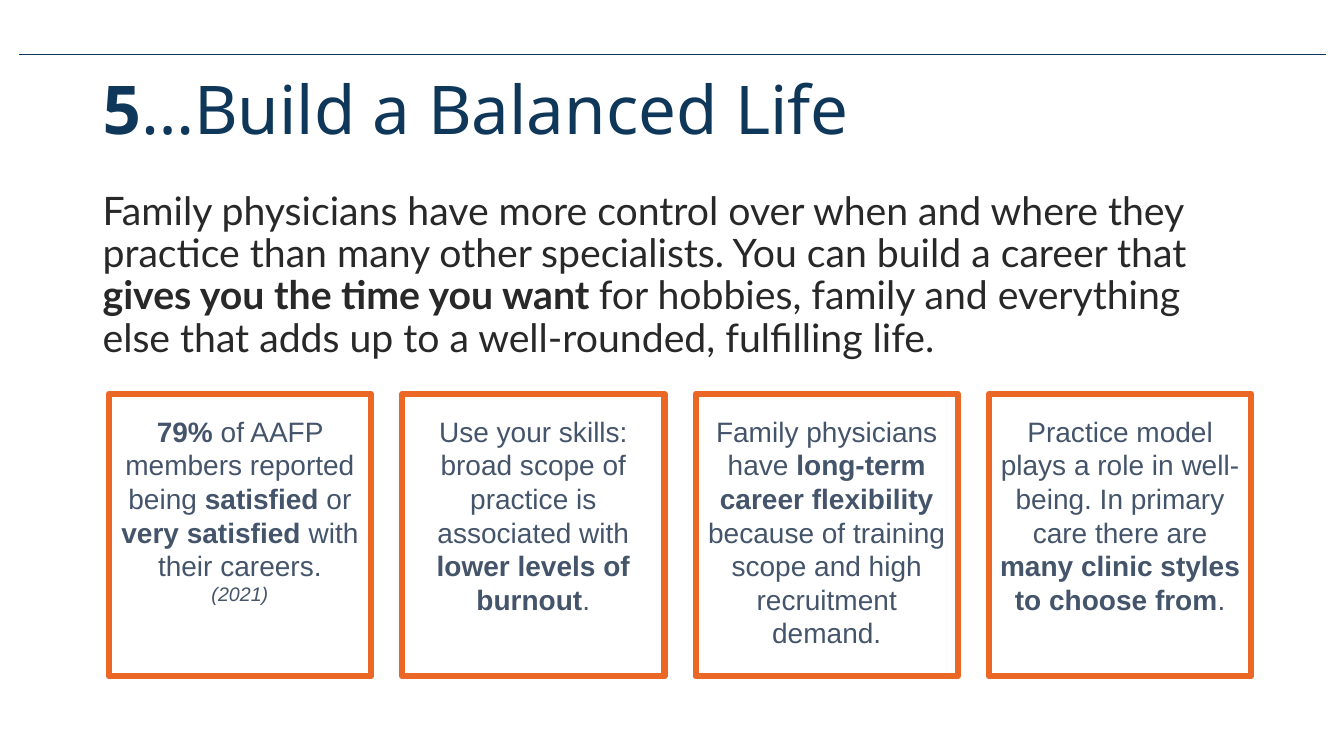
from pptx import Presentation
from pptx.dml.color import RGBColor
from pptx.enum.shapes import MSO_CONNECTOR, MSO_SHAPE
from pptx.enum.text import MSO_ANCHOR, PP_ALIGN
from pptx.oxml.ns import qn
from pptx.util import Emu, Pt

PX = 9144  # 100 px to the inch
NAVY, INK, SLATE, ORANGE, WHITE = "0F3759", "282828", "44546A", "EA6725", "FFFFFF"

TITLE = "**5**…Build a Balanced Life"
INTRO = ("Family physicians have more control over when and where they practice than many "
         "other specialists. You can build a career that **gives you the time you want **for "
         "hobbies, family and everything else that adds up to a well-rounded, fulfilling life.")
CARDS = [
    "**79% **of AAFP members reported being **satisfied** or **very satisfied **"
    "with their careers.",
    "Use your skills: broad scope of practice is associated with **lower levels of burnout**.",
    "Family physicians have **long-term career flexibility **because of training scope "
    "and high recruitment demand.",
    "Practice model plays a role in well-being. In primary care there are "
    "**many clinic styles to choose from**.",
]
SURVEY_YEAR = "(2021)"


def px(length):
    return Emu(length * PX)


def rgb(value):
    return RGBColor.from_string(value)


def write(paragraph, text, *, font, size, color, italic=False,
          align=PP_ALIGN.LEFT, spacing=1.0):
    """Fill a paragraph; parts between double asterisks become bold."""
    paragraph.alignment = align
    paragraph.line_spacing = spacing
    for index, part in enumerate(text.split("**")):
        if part:
            run = paragraph.add_run()
            run.text = part
            run.font.name, run.font.size = font, Pt(size)
            run.font.color.rgb = rgb(color)
            run.font.bold, run.font.italic = index % 2 == 1, italic


class BalancedLifeSlide:
    card_font = {"font": "Arial", "color": SLATE, "align": PP_ALIGN.CENTER}

    def __init__(self, deck):
        self.slide = deck.slides.add_slide(deck.slide_layouts[6])
        self.shapes = self.slide.shapes

    def rule(self, left, right, y):
        rule = self.shapes.add_connector(
            MSO_CONNECTOR.STRAIGHT, px(left), px(y), px(right), px(y))
        rule.line.color.rgb, rule.line.width = rgb(NAVY), Pt(0.5)
        properties = rule._element.spPr
        properties.append(properties.makeelement(qn("a:effectLst"), {}))

    def frame(self, shape, inset_top):
        frame = shape.text_frame
        frame.word_wrap, frame.vertical_anchor = True, MSO_ANCHOR.TOP
        frame.margin_left = frame.margin_right = px(10)
        frame.margin_top, frame.margin_bottom = px(inset_top), px(5)
        return frame

    def text(self, box, content, **style):
        shape = self.shapes.add_textbox(*map(px, box))
        write(self.frame(shape, 5).paragraphs[0], content, spacing=0.9, **style)

    def card(self, box, message, footnote=None):
        card = self.shapes.add_shape(MSO_SHAPE.RECTANGLE, *map(px, box))
        card.shadow.inherit = False
        card.fill.solid()
        card.fill.fore_color.rgb = rgb(WHITE)
        card.line.color.rgb, card.line.width = rgb(ORANGE), Pt(4.5)
        frame = self.frame(card, 20)
        write(frame.paragraphs[0], message, size=20, **self.card_font)
        if footnote:
            write(frame.add_paragraph(), footnote, size=14, italic=True, **self.card_font)


def main():
    deck = Presentation()
    deck.slide_width, deck.slide_height = px(1333), px(750)
    page = BalancedLifeSlide(deck)
    page.rule(19, 1315, 54)
    page.text((92, 71, 1150, 145), TITLE, font="Noto Sans", size=48, color=NAVY)
    page.text((92, 185, 1150, 523), INTRO, font="Lato", size=28, color=INK)
    for column, message in enumerate(CARDS):
        page.card((108 + 291 * column, 391, 260, 280), message,
                  SURVEY_YEAR if column == 0 else None)
    deck.save("out.pptx")


if __name__ == "__main__":
    main()
